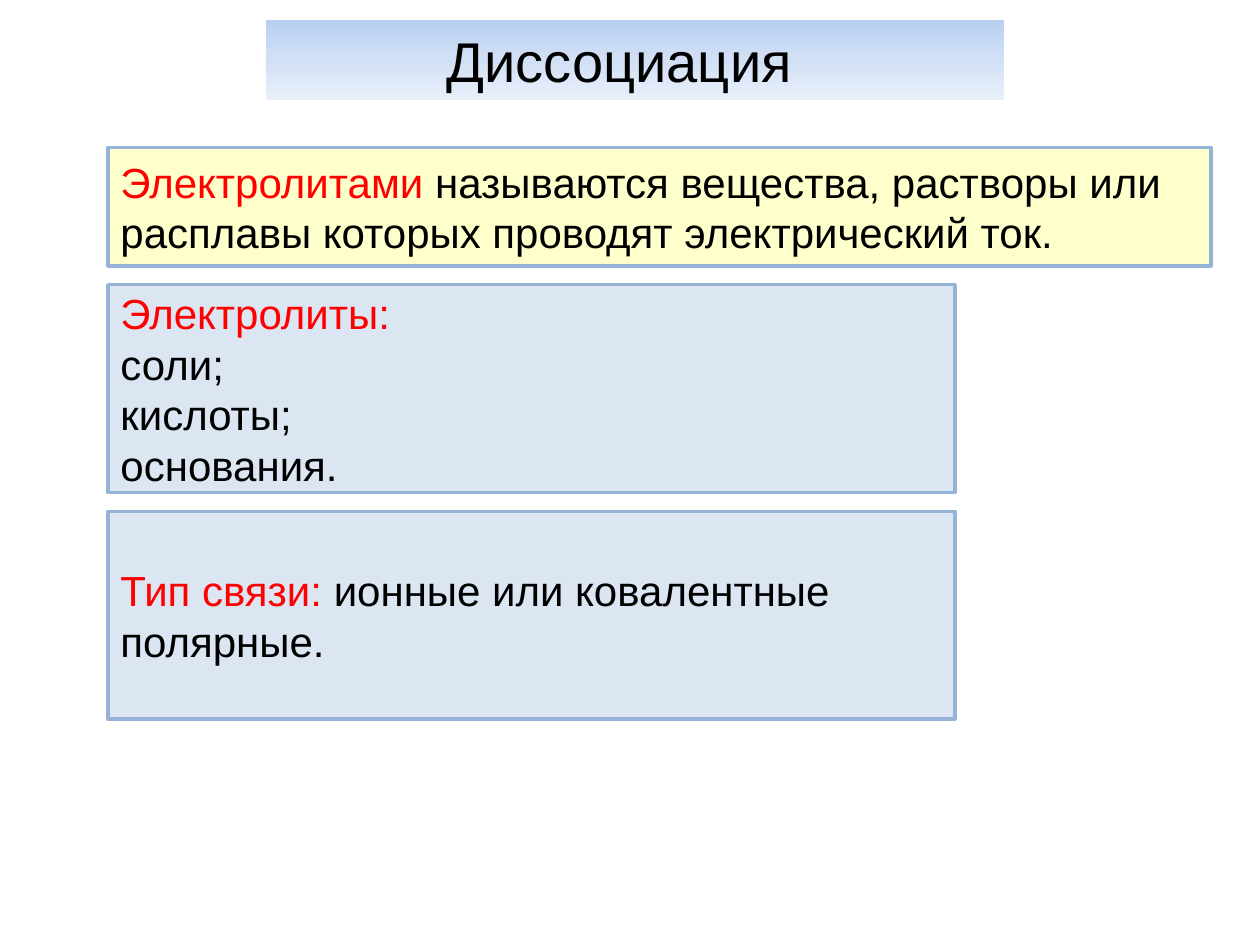
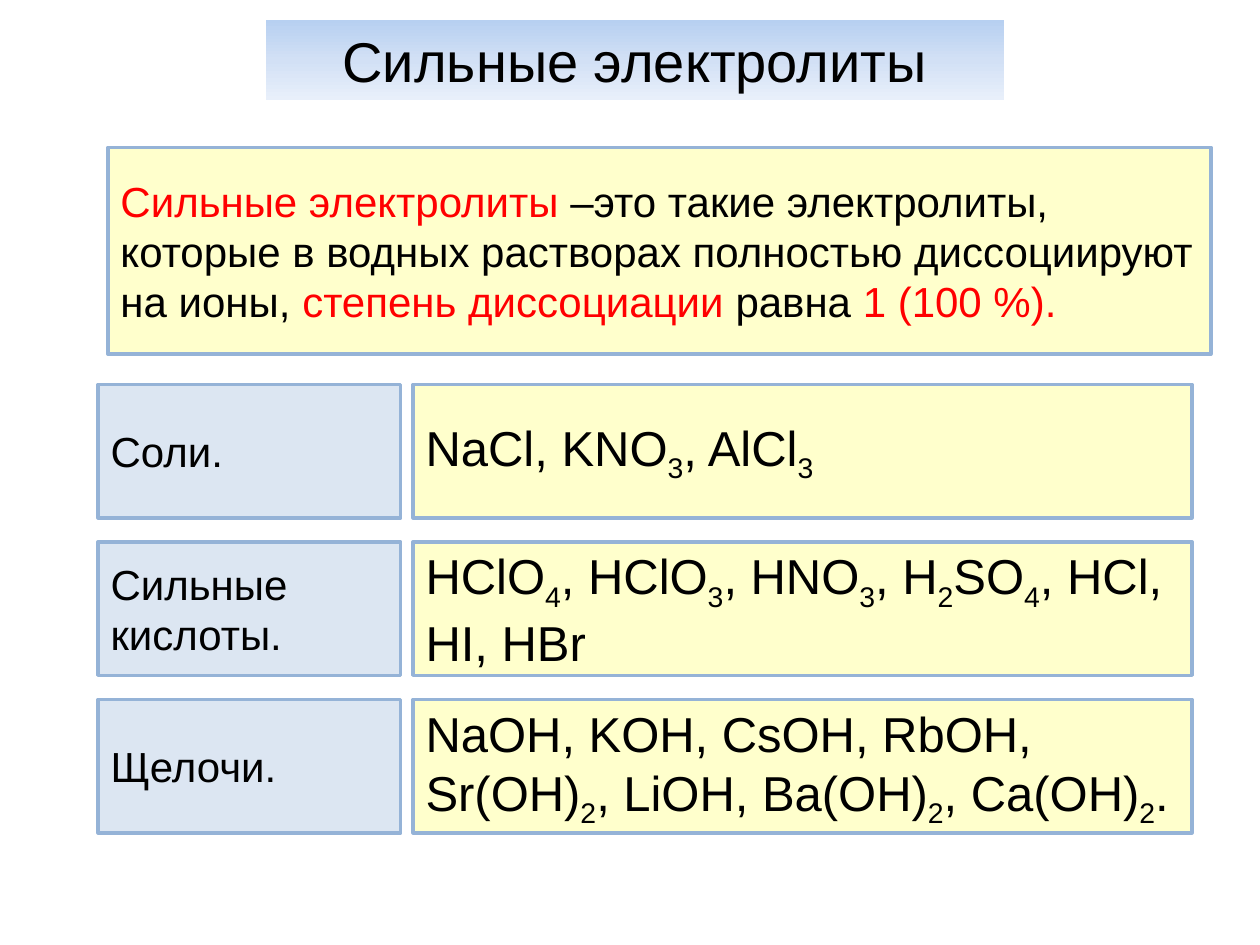
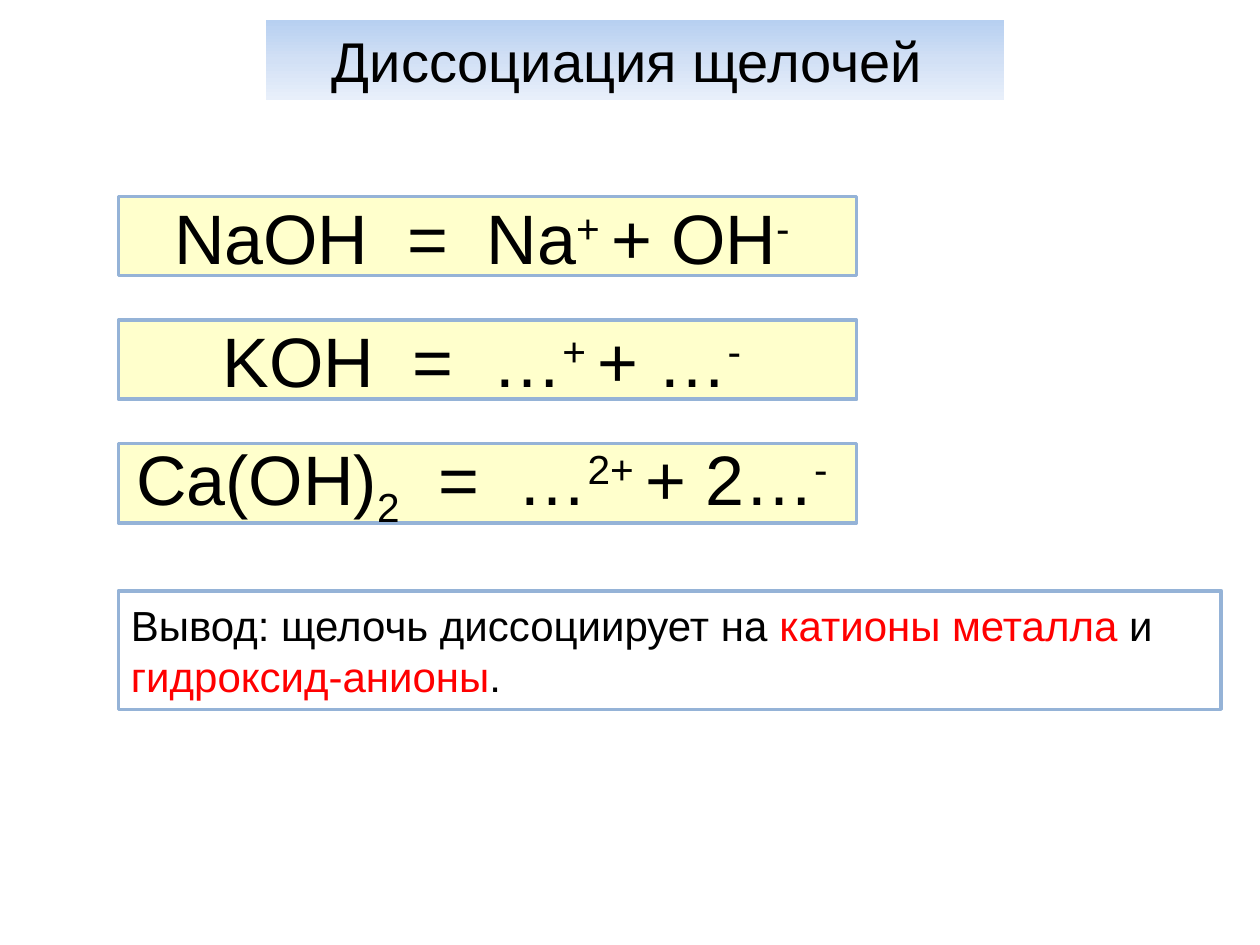
from copy import deepcopy

from pptx import Presentation
from pptx import util as u
from pptx.dml.color import RGBColor
from pptx.enum import shapes, text

C = {"black": "000000", "red": "FF0000", "yellow": "FFFFCC", "blue": "DCE6F2",
     "border": "95B3D7"}
TITLE_STOPS = [(0, "B7D0F1"), (0.5, "D2E0F5"), (1, "E8EFFA")]
TITLE_BOX = (5.36, 0.41, 14.88, 1.6)
FONT = "Arial"
LEFT, CENTER = text.PP_ALIGN.LEFT, text.PP_ALIGN.CENTER
BASELINE = {"_": "-25000", "^": "30000"}


def rgb(name):
    return RGBColor.from_string(C[name])


def write(tf, paragraphs, size, align):
    """Pieces are split by |; prefixes: * red, _ subscript, ^ superscript, ~ spaced."""
    tf.word_wrap = True
    tf.auto_size = text.MSO_AUTO_SIZE.NONE
    tf.vertical_anchor = text.MSO_ANCHOR.MIDDLE
    for i, line in enumerate(paragraphs):
        p = tf.add_paragraph() if i else tf.paragraphs[0]
        p.alignment = align
        for piece in line.split("|"):
            mark = piece[0] if piece[0] in "*_^~" else ""
            r = p.add_run()
            r.text = piece[len(mark):]
            r.font.name = FONT
            r.font.size = u.Pt(size)
            r.font.color.rgb = rgb("red" if mark == "*" else "black")
            if mark in BASELINE:
                r.font._element.set("baseline", BASELINE[mark])
            elif mark == "~":
                r.font._element.set("spc", "1100")


def panel(s, box, paragraphs, fill=None, size=24, align=LEFT):
    """Bordered rectangle with text."""
    sp = s.shapes.add_shape(shapes.MSO_SHAPE.RECTANGLE, *map(u.Cm, box))
    sp.shadow.inherit = False
    if fill:
        sp.fill.solid()
        sp.fill.fore_color.rgb = rgb(fill)
    else:
        sp.fill.background()
    sp.line.color.rgb = rgb("border")
    sp.line.width = u.Pt(2)
    write(sp.text_frame, paragraphs, size, align)


def titled_slide(prs, title, shift=0):
    """Slide with the gradient title band; shift widens the right inset."""
    s = prs.slides.add_slide(prs.slide_layouts[5])
    sp = s.shapes.title
    sp.left, sp.top, sp.width, sp.height = map(u.Cm, TITLE_BOX)
    sp.fill.gradient()
    sp.fill.gradient_angle = 270
    stops = sp._element.spPr.find(".//{*}gsLst")
    stops.append(deepcopy(stops[-1]))
    for stop, (position, color) in zip(sp.fill.gradient_stops, TITLE_STOPS):
        stop.position = position
        stop.color.rgb = RGBColor.from_string(color)
    write(sp.text_frame, [title], 32, CENTER)
    sp.text_frame.margin_right = u.Cm(0.25 + shift)
    return s


def electrolyte_facts(s, box, facts):
    """Equal blue panels stacked with a gap."""
    x, y, w, h = box
    gap = 0.38
    panel_h = (h - gap * (len(facts) - 1)) / len(facts)
    for i, fact in enumerate(facts):
        panel(s, (x, y + i * (panel_h + gap), w, panel_h), fact, "blue")


def substance_grid(s, box, rows):
    """Class of substance on the left, its formulas on the right."""
    x, y, w, h = box
    label_w, row_h, gap = 6.1, 2.69, 0.25
    pitch = (h - row_h) / (len(rows) - 1)
    formula_x = label_w + gap
    for i, (label, formulas) in enumerate(rows):
        top = y + i * pitch
        panel(s, (x, top, label_w, row_h), label, "blue")
        panel(s, (x + formula_x, top, w - formula_x, row_h), [formulas], "yellow", 28)


def equations(s, box, lines):
    """Evenly spaced dissociation equations."""
    x, y, w, h = box
    line_h = 1.6
    pitch = (h - line_h) / (len(lines) - 1)
    for i, line in enumerate(lines):
        panel(s, (x, y + i * pitch, w, line_h), [line], "yellow", 40, CENTER)


def main():
    prs = Presentation()
    prs.slide_width, prs.slide_height = u.Cm(25.4), u.Cm(19.05)

    # Electrolytes
    s = titled_slide(prs, "Диссоциация", 0.63)
    panel(s, (2.18, 2.97, 22.23, 2.39),
          ["*Электролитами| называются вещества, растворы или расплавы "
           "которых проводят электрический ток."], "yellow")
    electrolyte_facts(s, (2.18, 5.74, 17.07, 8.76), [
        ["*Электролиты:", "соли;", "кислоты;", "основания."],
        ["*Тип связи: |ионные или ковалентные полярные."]])

    # Strong electrolytes
    s = titled_slide(prs, "Сильные электролиты")
    panel(s, (2.18, 2.97, 22.23, 4.17),
          ["*Сильные электролиты |–это такие электролиты, которые в водных "
           "растворах полностью диссоциируют на ионы, |*степень диссоциации "
           "|равна |*1 (100 %)."], "yellow")
    substance_grid(s, (1.98, 7.75, 22.05, 9.04), [
        (["Соли."], "NaCl, KNO|_3|, AlCl|_3"),
        (["Сильные", "кислоты."],
         "HClO|_4|, HClO|_3|, HNO|_3|, H|_2|SO|_4|, HCl, HI, HBr"),
        (["Щелочи."],
         "NaOH, KOH, CsOH, RbOH, Sr(OH)|_2|, LiOH, Ba(OH)|_2|, Ca(OH)|_2|.")])

    # Dissociation of alkalis
    s = titled_slide(prs, "Диссоциация щелочей", 0.31)
    equations(s, (2.39, 3.96, 14.88, 6.58), [
        "NaOH|~ =| Na|^+ |+ OH|^- ",
        "KOH|~ =| …|^+ |+ …|^- ",
        "Ca(OH)|_2|~ =| …|^2+ |+ 2…|^- "])
    panel(s, (2.39, 11.91, 22.23, 2.39),
          ["Вывод: щелочь диссоциирует на |*катионы металла |и "
           "|*гидроксид-анионы|."])

    prs.save("out.pptx")


if __name__ == "__main__":
    main()
